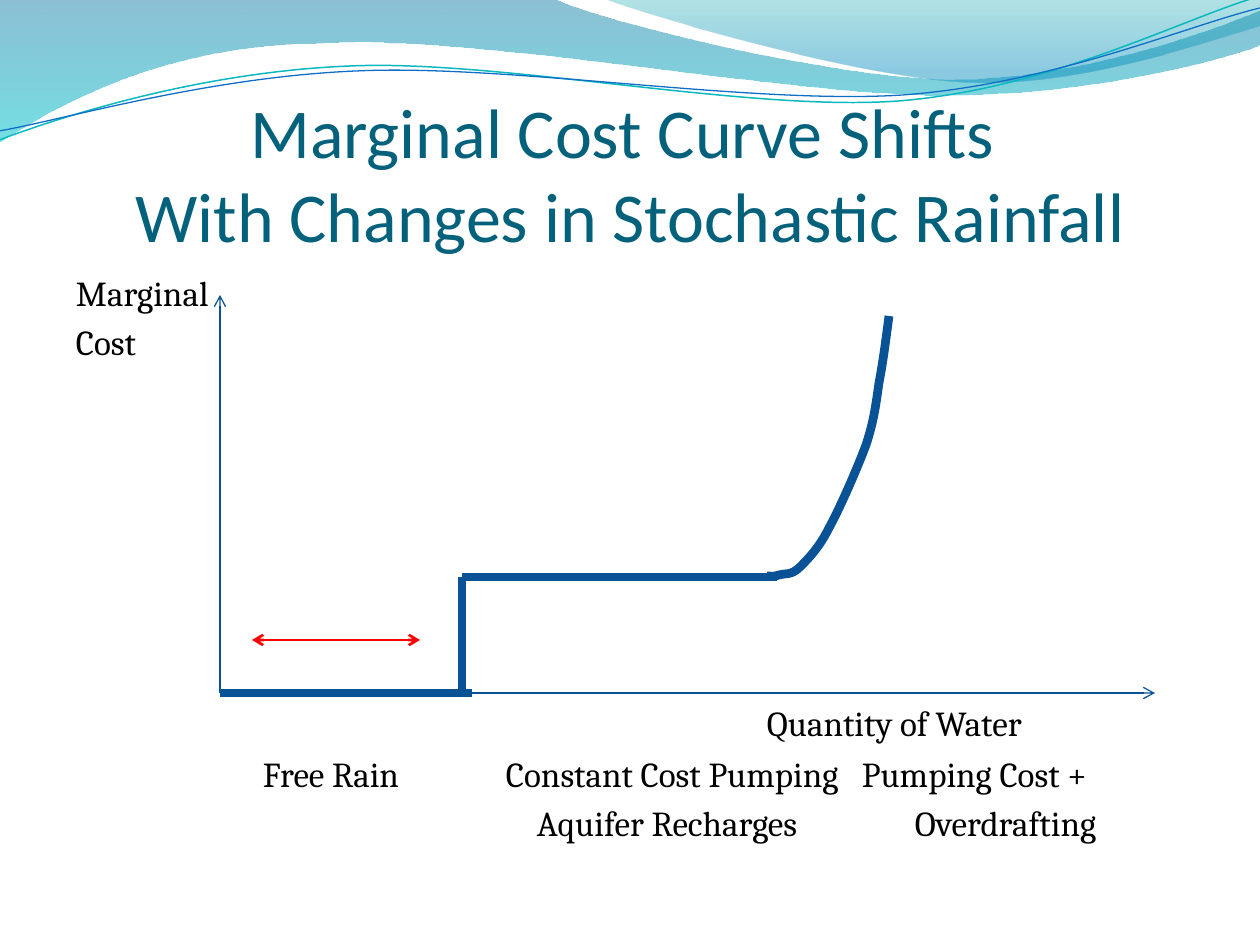
from lxml import etree
from pptx import Presentation
from pptx.dml.color import RGBColor
from pptx.enum.shapes import MSO_CONNECTOR
from pptx.enum.text import MSO_ANCHOR, MSO_AUTO_SIZE, PP_ALIGN
from pptx.oxml.ns import qn
from pptx.util import Pt

PX = 914400 / 126
STRAIGHT = MSO_CONNECTOR.STRAIGHT
LEFT, CENTER = PP_ALIGN.LEFT, PP_ALIGN.CENTER
BOTTOM, TOP = MSO_ANCHOR.BOTTOM, MSO_ANCHOR.TOP
NO_AUTOFIT = MSO_AUTO_SIZE.NONE
COLORS = {
    "title": "04617B", "text": "000000", "cost": "095295", "range": "FF0000",
    "wave_blue": "0074A1", "wave_cyan": "00C6CF",
    "crest_teal": "00A1A9", "crest_blue": "008BBF",
    "line_teal": "0AB8BF", "line_blue": "0F6FC6",
}

prs = Presentation()
prs.slide_width, prs.slide_height = round(1260 * PX), round(945 * PX)
layout = prs.slide_layouts[5]
slide = prs.slides.add_slide(layout)
shapes = slide.shapes


def write(holder, lines, box, size=20, font="Cambria", color="text",
          align=LEFT, anchor=TOP, inset=(13, 6)):
    """Fill a text holder; each line is (text, space before in pt, tab stops in px)."""
    holder.left, holder.top, holder.width, holder.height = (round(v * PX) for v in box)
    frame = holder.text_frame
    frame.word_wrap = True
    frame.auto_size = NO_AUTOFIT
    frame.vertical_anchor = anchor
    frame.margin_left = frame.margin_right = round(inset[0] * PX)
    frame.margin_top = frame.margin_bottom = round(inset[1] * PX)
    for number, (text, space_before, tab_stops) in enumerate(lines):
        paragraph = frame.add_paragraph() if number else frame.paragraphs[0]
        paragraph.text = text
        paragraph.alignment = align
        if space_before:
            paragraph.space_before = Pt(space_before)
        if tab_stops:
            tabs = etree.SubElement(paragraph._p.get_or_add_pPr(), qn("a:tabLst"))
            for stop in tab_stops:
                etree.SubElement(tabs, qn("a:tab"), pos=str(round(stop * PX)), algn="l")
        for run in paragraph.runs:
            run.font.name = font
            run.font.size = Pt(size)
            run.font.color.rgb = RGBColor.from_string(COLORS[color])


def draw_path(start, segments, closed=False):
    """Draw px segments: two numbers make a line, six a cubic Bézier curve."""
    points = [(segment[i], segment[i + 1])
              for segment in segments for i in range(0, len(segment), 2)]
    scaled = [(round(x * PX), round(y * PX)) for x, y in [start, *points]]
    builder = shapes.build_freeform(*scaled[0], scale=1.0)
    builder.add_line_segments(scaled[1:], close=closed)
    outline = builder.convert_to_shape()
    outline.shadow.inherit = False
    steps = iter(list(outline._element.spPr.iter(qn("a:lnTo"))))
    for segment in segments:
        first = next(steps)
        if len(segment) == 6:
            first.tag = qn("a:cubicBezTo")
            for _ in range(2):
                control = next(steps)
                first.append(control[0])
                control.getparent().remove(control)
    return outline


# Wave bands: start, segments, gradient stops (colour, position, opacity %)
bands = [
    ((-1, -1),
     [(554, -1), (600, 21, 837, 79, 955, 79), (1075, 79, 1207, 33, 1260, 11),
      (1261, 45), (1239, 55, 1096, 96, 940, 95), (784, 95, 481, 35, 324, 43),
      (163, 44, 58, 105, -1, 142)],
     [("wave_blue", 0, 45), ("wave_cyan", 1, 55)]),
    ((604, -1),
     [(641, 14, 859, 78, 969, 82), (1079, 87, 1211, 40, 1260, 26), (1260, 0)],
     [("crest_teal", 0, 30), ("crest_blue", 0.8, 45)]),
]
backdrop = []
for start, segments, stops in bands:
    band = draw_path(start, segments, closed=True)
    band.line.fill.background()
    band.fill.gradient()
    band.fill.gradient_angle = 270
    for stop, (color, position, opacity) in zip(band.fill.gradient_stops, stops):
        stop.color.rgb = RGBColor.from_string(COLORS[color])
        stop.position = position
    for rgb, (_, _, opacity) in zip(band._element.spPr.iter(qn("a:srgbClr")), stops):
        etree.SubElement(rgb, qn("a:alpha"), val=str(opacity * 1000))
    backdrop.append(band)

# Open curves: start, segments, colour, width in points
curves = [
    ((-1, 140), [(60, 117, 199, 72, 349, 66), (498, 59, 747, 112, 898, 101),
                 (1050, 89, 1182, 19, 1257, -3)], "line_teal", 0.85),
    ((-1, 131), [(59, 121, 207, 77, 357, 71), (508, 64, 752, 105, 903, 95),
                 (1053, 84, 1186, 26, 1260, 8)], "line_blue", 0.75),
    ((767, 576), [(770, 576, 774, 577, 779, 575), (785, 573, 791, 576, 800, 567),
                  (808, 559, 819, 548, 829, 528), (840, 508, 857, 469, 866, 445),
                  (874, 421, 876, 404, 879, 383), (883, 362, 886, 339, 889, 316)],
     "cost", 5),
]
for start, segments, color, width in curves:
    curve = draw_path(start, segments)
    curve.fill.background()
    curve.line.color.rgb = RGBColor.from_string(COLORS[color])
    curve.line.width = Pt(width)
    if color != "cost":
        backdrop.append(curve)

# The waves belong to the layout, behind its placeholders
for position, wave in enumerate(backdrop, start=2):
    layout.shapes._spTree.insert(position, wave._element)

write(shapes.title,
      [("Marginal Cost Curve Shifts \vWith Changes in Stochastic Rainfall", 0, [])],
      (63, 98, 1134, 165), size=40, font="Calibri", color="title",
      align=CENTER, anchor=BOTTOM, inset=(0, 6))

axis_and_zone_labels = [
    ("Marginal", 0, []),
    ("Cost", 4, []),
    ("\tQuantity of Water", 193.5, [691]),
    ("\tFree Rain\tConstant Cost Pumping\tPumping Cost +", 5.3, [187, 430, 786]),
    ("\tAquifer Recharges\tOverdrafting", 4, [461, 839]),
]
write(shapes.add_textbox(0, 0, 0, 0), axis_and_zone_labels, (63, 266, 1134, 605))

# Axes, cost steps and rainfall range: ends, colour, width, arrowheads
straight_lines = [
    ((220, 693, 1155, 693), "cost", 0.75, ["tailEnd"]),
    ((220, 693, 220, 295), "cost", 0.75, ["tailEnd"]),
    ((220, 693, 472, 693), "cost", 5, []),
    ((787, 578, 787, 577), "cost", 0.75, []),
    ((777, 577, 462, 577), "cost", 5, []),
    ((462, 577, 462, 693), "cost", 5, []),
    ((252, 640, 420, 640), "range", 1.5, ["headEnd", "tailEnd"]),
]
for ends, color, width, arrowheads in straight_lines:
    connector = shapes.add_connector(STRAIGHT, *(round(v * PX) for v in ends))
    connector.line.color.rgb = RGBColor.from_string(COLORS[color])
    connector.line.width = Pt(width)
    for arrowhead in arrowheads:
        etree.SubElement(connector.line._get_or_add_ln(), qn(f"a:{arrowhead}"), type="arrow")
    etree.SubElement(connector._element.spPr, qn("a:effectLst"))

prs.save("out.pptx")
